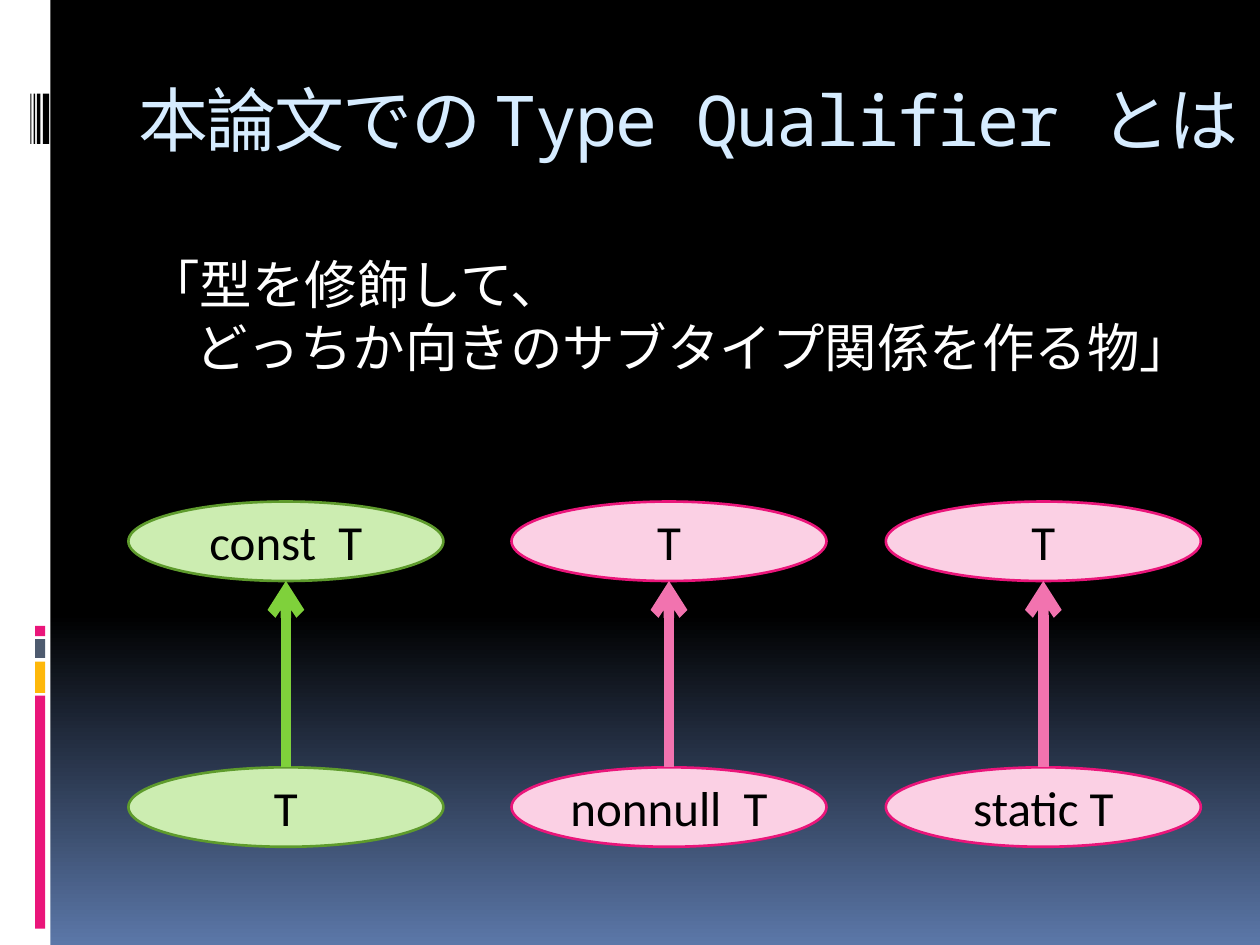
"""Build a slide on type qualifiers and the subtype relations they create."""
from lxml import etree
from pptx import Presentation, util as u
from pptx.dml.color import RGBColor
from pptx.enum import shapes, text
from pptx.oxml.ns import qn

HUES = {
    "black": "000000", "white": "FFFFFF", "dusk": "5B77A8", "ice": "D6ECFF",
    "rose": "EA157A", "gold": "FEB80A", "slate": "4E5B6F",
    "mint": "CCEDB1", "leaf": "5E9B2C", "lime": "7FD13B",
    "blush": "FBD0E4", "pink": "F273AF",
}
TITLE = "本論文での Type Qualifier とは"
BODY = "「型を修飾して、\vどっちか向きのサブタイプ関係を作る物」"
GREEN = ("mint", "leaf", "lime")
PINK = ("blush", "rose", "pink")
PAIRS = [
    (73.4, "const  T", "T", GREEN),
    (292.3, "T", "nonnull  T", PINK),
    (506.2, "T", "static T", PINK),
]
WIDE, HIGH = 180, 45.4
UPPER, LOWER = 286.6, 438.5
BLOCKS = [(357.7, 5.8, "rose"), (365.2, 10.8, "slate"),
          (378, 18, "gold"), (397.5, 133.2, "rose")]
BARS = [(17.3, 0.6), (19.3, 0.8), (21.1, 2), (24.5, 3.6)]


def rgb(hue):
    return RGBColor.from_string(HUES[hue])


def write(shape, words, size, hue="white", font="Calibri", align="LEFT",
          anchor="TOP", track=0, before=0, left=0, hang=0):
    frame = shape.text_frame
    frame.word_wrap = True
    frame.vertical_anchor = getattr(text.MSO_ANCHOR, anchor)
    para = frame.paragraphs[0]
    para.text = words
    para.alignment = getattr(text.PP_ALIGN, align)
    para.space_before = u.Pt(before)
    props = para._p.get_or_add_pPr()
    props.set("marL", str(u.Pt(left)))
    props.set("indent", str(u.Pt(hang)))
    for run in para.runs:
        run.font.name, run.font.size = font, u.Pt(size)
        run.font.color.rgb = rgb(hue)
        if track:
            run._r.get_or_add_rPr().set("spc", str(track * 100))


def draw(slide, kind, box, fill, edge=None):
    shape = slide.shapes.add_shape(kind, *map(u.Pt, box))
    shape.shadow.inherit = False
    shape.fill.solid()
    shape.fill.fore_color.rgb = rgb(fill)
    if edge:
        shape.line.color.rgb = rgb(edge)
        shape.line.width = u.Pt(1.5)
    else:
        shape.line.fill.background()
    return shape


def oval(slide, x, y, words, fill, edge):
    shape = draw(slide, shapes.MSO_SHAPE.OVAL, (x, y, WIDE, HIGH), fill, edge)
    write(shape, words, 28, "black", align="CENTER", anchor="MIDDLE")
    return shape


def arrow(slide, x, low, hue):
    ends = map(u.Pt, (x, LOWER, x, UPPER + HIGH))
    line = slide.shapes.add_connector(shapes.MSO_CONNECTOR.STRAIGHT, *ends)
    line.begin_connect(low, 0)
    line.line.color.rgb = rgb(hue)
    line.line.width = u.Pt(6)
    props = line._element.spPr
    etree.SubElement(props.find(qn("a:ln")), qn("a:tailEnd"), type="arrow")
    etree.SubElement(props, qn("a:effectLst"))


def main():
    deck = Presentation()
    deck.slide_width, deck.slide_height = u.Pt(720), u.Pt(540)
    slide = deck.slides.add_slide(deck.slide_layouts[6])

    back = slide.background.fill
    back.gradient()
    back.gradient_angle = 270
    for stop, (place, hue) in zip(back.gradient_stops,
                                  [(0.65, "black"), (1, "dusk")]):
        stop.position, stop.color.rgb = place, rgb(hue)

    rect = shapes.MSO_SHAPE.RECTANGLE
    draw(slide, rect, (0, 0, 28.8, 540), "white")
    for y, high, hue in BLOCKS:
        draw(slide, rect, (20, y, 5.8, high), hue)
    for x, wide in BARS:
        draw(slide, rect, (x, 53.5, wide, 28.8), "black")

    title = slide.shapes.add_textbox(*map(u.Pt, (72, 40.3, 648, 72)))
    write(title, TITLE, 40, "ice", "Noto Sans Mono", track=-1)
    body = slide.shapes.add_textbox(*map(u.Pt, (72, 140.4, 625.7, 360)))
    write(body, BODY, 30, before=7, left=32.4, hang=-27.4)

    for x, top, base, (fill, edge, hue) in PAIRS:
        oval(slide, x, UPPER, top, fill, edge)
        low = oval(slide, x, LOWER, base, fill, edge)
        arrow(slide, x + WIDE / 2, low, hue)

    deck.save("out.pptx")


if __name__ == "__main__":
    main()
